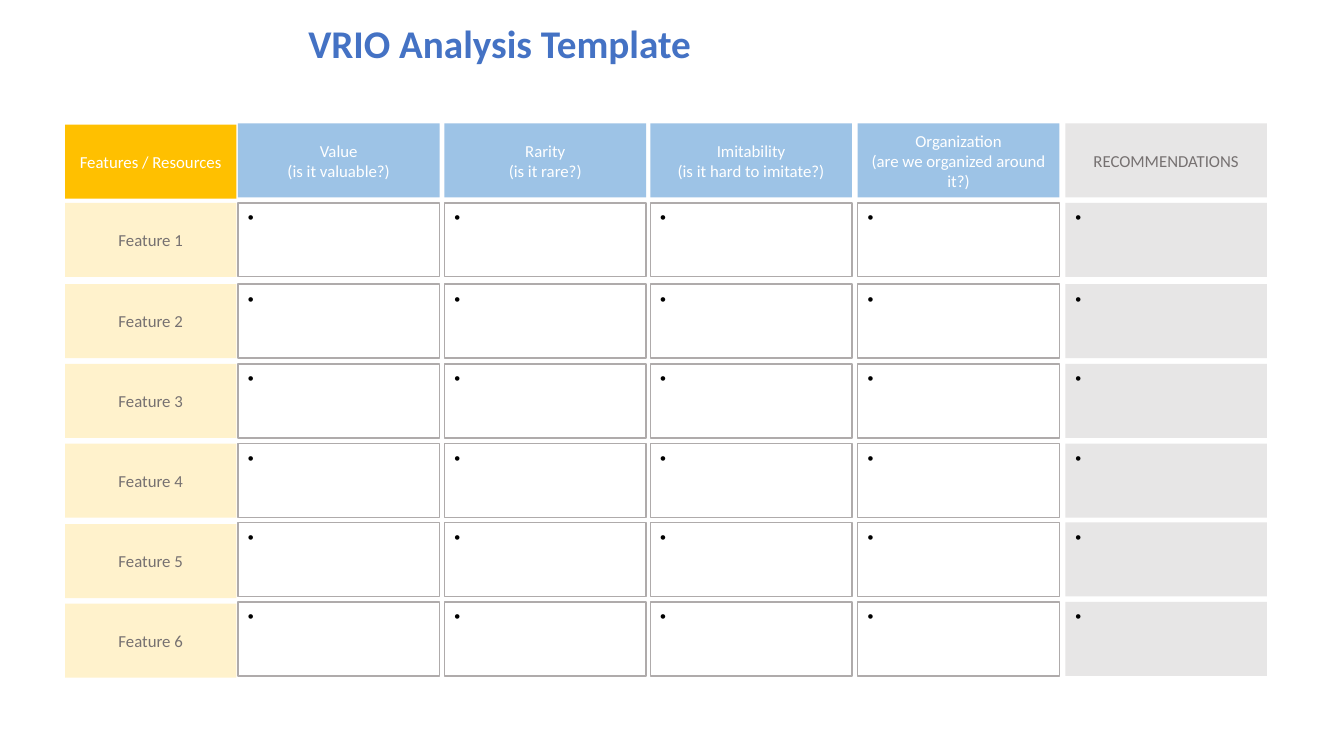
from lxml import etree
from pptx import Presentation
from pptx.dml.color import RGBColor
from pptx.enum.shapes import MSO_SHAPE
from pptx.enum.text import MSO_ANCHOR, MSO_AUTO_SIZE, PP_ALIGN
from pptx.oxml.ns import qn
from pptx.util import Pt

RECTANGLE = MSO_SHAPE.RECTANGLE
TOP, MIDDLE = MSO_ANCHOR.TOP, MSO_ANCHOR.MIDDLE
LEFT, CENTER = PP_ALIGN.LEFT, PP_ALIGN.CENTER
NO_AUTOFIT = MSO_AUTO_SIZE.NONE
TITLE_ONLY = 5

COLORS = {
    "title": "4472C4", "gold": "FFC000", "cream": "FFF2CC", "blue": "9DC3E6",
    "gray": "E7E6E6", "border": "AFABAB", "label": "767171",
    "white": "FFFFFF", "black": "000000",
}

# Grid, in points
LABEL_LEFT, LABEL_WIDTH = 46.5, 122.4
CELL_WIDTH, CELL_HEIGHT = 144, 52.8
COLUMN_LEFTS = [170, 317.5, 464.5, 612.7, 761]
ROW_TOPS = [144.9, 203, 260, 316.9, 373.2, 430]
LABEL_TOPS = ROW_TOPS[:4] + [374.4, 431.2]
HEADER_TOP = 88.2
HEADERS = [
    "Value\n(is it valuable?)",
    "Rarity\n(is it rare?)",
    "Imitability\n(is it hard to imitate?)",
    "Organization\n(are we organized around it?)",
    "RECOMMENDATIONS",
]


def color(name):
    return RGBColor.from_string(COLORS[name])


def write_text(frame, text, font="Calibri", size=12, ink="white", bold=False,
               align=CENTER, anchor=MIDDLE, spacing=None, bullet=False):
    """Fill a text frame, one paragraph for each line of the text."""
    frame.word_wrap = True
    frame.auto_size = NO_AUTOFIT
    frame.vertical_anchor = anchor
    for index, line in enumerate(text.split("\n")):
        para = frame.paragraphs[0] if index == 0 else frame.add_paragraph()
        para.alignment = align
        if spacing:
            para.line_spacing = spacing
        if bullet:
            properties = para._p.get_or_add_pPr()
            properties.set("marL", str(Pt(13.5)))
            properties.set("indent", str(-Pt(13.5)))
            etree.SubElement(properties, qn("a:buFont"), typeface="Arial")
            etree.SubElement(properties, qn("a:buChar"), char="•")
        span = para.add_run()
        span.text = line
        span.font.name = font
        span.font.size = Pt(size)
        span.font.bold = bold
        span.font.color.rgb = color(ink)


class SlideBuilder:
    def __init__(self, deck):
        self.page = deck.slides.add_slide(deck.slide_layouts[TITLE_ONLY])

    def title(self, text, left, top, width, height):
        box = self.page.shapes.title
        box.left, box.top = Pt(left), Pt(top)
        box.width, box.height = Pt(width), Pt(height)
        write_text(box.text_frame, text, size=28, ink="title", bold=True,
                   align=LEFT, spacing=0.9)

    def box(self, text, left, top, width, fill=None, border=None, **style):
        box = self.page.shapes.add_shape(
            RECTANGLE, Pt(left), Pt(top), Pt(width), Pt(CELL_HEIGHT))
        box.shadow.inherit = False
        if fill:
            box.fill.solid()
            box.fill.fore_color.rgb = color(fill)
        else:
            box.fill.background()
        if border:
            box.line.color.rgb = color(border)
            box.line.width = Pt(1)
        else:
            box.line.fill.background()
        write_text(box.text_frame, text, **style)

    def entry(self, left, top, **look):
        # A single space keeps the bullet of an unfilled entry visible
        self.box(" ", left, top, CELL_WIDTH, ink="black", align=LEFT,
                 anchor=TOP, bullet=True, **look)


def main():
    deck = Presentation()
    deck.slide_width, deck.slide_height = Pt(960), Pt(540)
    slide = SlideBuilder(deck)
    slide.title("VRIO Analysis Template", 213, 10.8, 739.4, 43.2)

    # Entry cells, with the recommendations in the last column
    for top in ROW_TOPS:
        for left in COLUMN_LEFTS[:-1]:
            slide.entry(left, top, border="border")
        slide.entry(COLUMN_LEFTS[-1], top, fill="gray")

    # Feature labels
    for number, top in enumerate(LABEL_TOPS, start=1):
        slide.box(f"Feature {number}", LABEL_LEFT, top, LABEL_WIDTH,
                  fill="cream", ink="label")

    # Header row
    slide.box("Features / Resources", LABEL_LEFT, HEADER_TOP + 0.8,
              LABEL_WIDTH, fill="gold")
    for header, left in zip(HEADERS[:-1], COLUMN_LEFTS):
        slide.box(header, left, HEADER_TOP, CELL_WIDTH, fill="blue")
    slide.box(HEADERS[-1], COLUMN_LEFTS[-1], HEADER_TOP, CELL_WIDTH,
              fill="gray", ink="label")

    deck.save("out.pptx")


if __name__ == "__main__":
    main()
